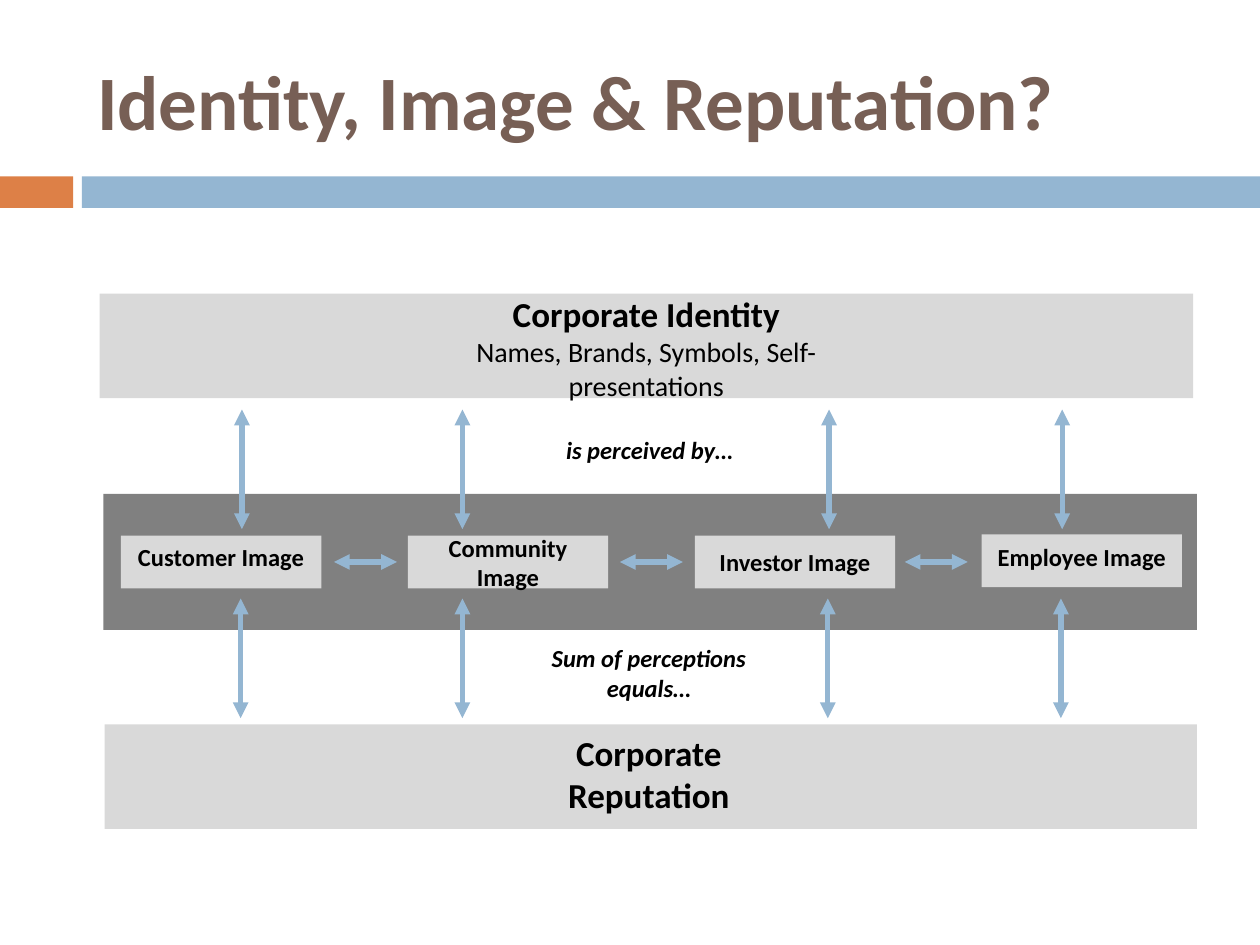
from lxml import etree
from pptx import Presentation
from pptx.dml.color import RGBColor
from pptx.enum.shapes import MSO_CONNECTOR, MSO_SHAPE
from pptx.enum.text import MSO_ANCHOR, MSO_AUTO_SIZE, PP_ALIGN
from pptx.oxml.ns import qn
from pptx.util import Inches, Pt

RECTANGLE = MSO_SHAPE.RECTANGLE
STRAIGHT = MSO_CONNECTOR.STRAIGHT
MIDDLE = MSO_ANCHOR.MIDDLE
NO_AUTOFIT = MSO_AUTO_SIZE.NONE
CENTER, LEFT = PP_ALIGN.CENTER, PP_ALIGN.LEFT

FONT = "Calibri"
BLACK, BROWN = "000000", "775F55"
ORANGE, BLUE = "DD8047", "94B6D2"
LIGHT_GRAY, DARK_GRAY = "D9D9D9", "808080"


def rgb(color):
    return RGBColor.from_string(color)


def set_font(paragraph, size, color=BLACK, bold=True, italic=False):
    font = paragraph.font
    font.name, font.size = FONT, Pt(size)
    font.bold, font.italic = bold, italic
    font.color.rgb = rgb(color)


def add_bar(shapes, left, top, width, height, color):
    bar = shapes.add_shape(RECTANGLE, Inches(left), Inches(top), Inches(width), Inches(height))
    bar.shadow.inherit = False
    bar.fill.solid()
    bar.fill.fore_color.rgb = rgb(color)
    bar.line.fill.background()


def add_label(shapes, left, top, width, height, lines, italic=False, wrap=True):
    """Add centred text; lines holds (text, size, bold) tuples."""
    label = shapes.add_textbox(Inches(left), Inches(top), Inches(width), Inches(height))
    frame = label.text_frame
    frame.word_wrap = wrap
    frame.vertical_anchor = MIDDLE
    frame.text = "\n".join(text for text, _, _ in lines)
    for paragraph, (_, size, bold) in zip(frame.paragraphs, lines):
        paragraph.alignment = CENTER
        set_font(paragraph, size, bold=bold, italic=italic)


def add_double_arrow(shapes, x1, y1, x2, y2):
    arrow = shapes.add_connector(STRAIGHT, Inches(x1), Inches(y1), Inches(x2), Inches(y2))
    arrow.line.color.rgb = rgb(BLUE)
    arrow.line.width = Pt(3)
    line = arrow.line._get_or_add_ln()
    for end in ("a:headEnd", "a:tailEnd"):
        etree.SubElement(line, qn(end), type="triangle")
    etree.SubElement(arrow._element.spPr, qn("a:effectLst"))


def add_title(slide, text):
    title = slide.shapes.title
    title.left, title.top = Inches(0.67), Inches(0.25)
    title.width, title.height = Inches(8.92), Inches(1.08)
    frame = title.text_frame
    frame.text = text
    frame.auto_size = NO_AUTOFIT
    frame.vertical_anchor = MIDDLE
    frame.paragraphs[0].alignment = LEFT
    set_font(frame.paragraphs[0], 44, BROWN)


def add_image_box(shapes, left, top, text, text_middle):
    group = shapes.add_group_shape().shapes
    add_bar(group, left, top, 1.59, 0.42, LIGHT_GRAY)
    add_label(group, left - 0.04, text_middle - 0.17, 1.67, 0.34, [(text, 14, True)])


def main():
    prs = Presentation()
    prs.slide_width, prs.slide_height = Inches(10), Inches(7.5)
    slide = prs.slides.add_slide(prs.slide_layouts[5])
    shapes = slide.shapes

    # Header
    add_bar(shapes, 0, 1.4, 0.58, 0.25, ORANGE)
    add_bar(shapes, 0.65, 1.4, 9.35, 0.25, BLUE)
    add_title(slide, "Identity, Image & Reputation?")

    # Identity, image and reputation bands
    add_bar(shapes, 0.82, 3.92, 8.68, 1.08, DARK_GRAY)
    add_bar(shapes, 0.79, 2.33, 8.68, 0.83, LIGHT_GRAY)
    add_label(shapes, 3.13, 2.4, 4, 0.71, [
        ("Corporate Identity", 20, True),
        ("Names, Brands, Symbols, Self-presentations", 16, False),
    ])
    add_bar(shapes, 0.83, 5.75, 8.67, 0.83, LIGHT_GRAY)
    add_label(shapes, 3.85, 5.92, 2.6, 0.44, [("Corporate Reputation", 20, True)])

    # Images held by each audience
    audiences = [
        ("Customer Image", 4.25, 4.42),
        ("Community Image", 4.25, 4.46),
        ("Investor Image", 4.25, 4.46),
        ("Employee Image", 4.24, 4.42),
    ]
    for i, (text, top, text_middle) in enumerate(audiences):
        add_image_box(shapes, 0.96 + 2.277 * i, top, text, text_middle)

    # Arrows between neighbouring images
    for x in (2.65, 4.92, 7.18):
        add_double_arrow(shapes, x, 4.46, x + 0.5, 4.46)

    # Arrows from the images up to identity and down to reputation
    for upper_x, lower_x in ((1.92, 1.91), (3.67, 3.67), (6.58, 6.57), (8.43, 8.42)):
        add_double_arrow(shapes, upper_x, 4.2, upper_x, 3.25)
        add_double_arrow(shapes, lower_x, 5.7, lower_x, 4.75)

    # Captions between the bands
    add_label(shapes, 4.39, 3.4, 1.53, 0.34, [("is perceived by…", 14, True)],
              italic=True, wrap=False)
    add_label(shapes, 3.96, 5.17, 2.38, 0.34, [("Sum of perceptions equals…", 14, True)],
              italic=True)

    prs.save("out.pptx")


if __name__ == "__main__":
    main()
